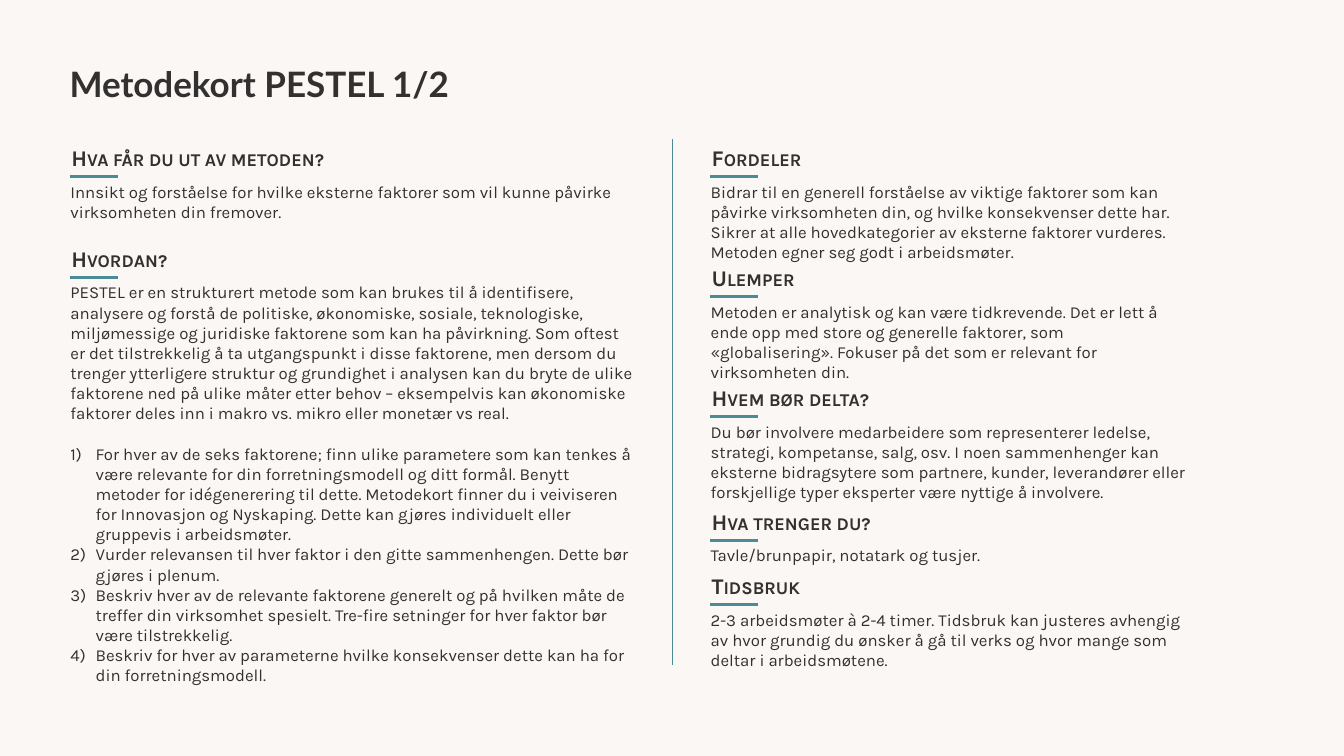
"""Build the PESTEL method card slide."""
from lxml.etree import SubElement
from pptx import Presentation
from pptx.dml.color import RGBColor
from pptx.enum.shapes import MSO_CONNECTOR
from pptx.enum.text import MSO_ANCHOR, MSO_AUTO_SIZE, PP_ALIGN
from pptx.oxml.ns import qn
from pptx.util import Pt

PX = 9144
INK, TEAL, PAPER = "333030", "4B8B95", "FBF7F5"
TITLE = "Metodekort PESTEL 1/2"
STEPS = [
    "For hver av de seks faktorene; finn ulike parametere som kan tenkes å være relevante for din forretningsmodell og ditt formål. Benytt metoder for idégenerering til dette. Metodekort finner du i veiviseren for Innovasjon og Nyskaping. Dette kan gjøres individuelt eller gruppevis i arbeidsmøter.",
    "Vurder relevansen til hver faktor i den gitte sammenhengen. Dette bør gjøres i plenum.",
    "Beskriv hver av de relevante faktorene generelt og på hvilken måte de treffer din virksomhet spesielt. Tre-fire setninger for hver faktor bør være tilstrekkelig.",
    "Beskriv for hver av parameterne hvilke konsekvenser dette kan ha for din forretningsmodell.",
]
# (top, body height, heading, body, steps)
LEFT_SECTIONS = [
    (138, 50, "Hva får du ut av metoden?", "Innsikt og forståelse for hvilke eksterne faktorer som vil kunne påvirke virksomheten din fremover.", []),
    (238, 394, "Hvordan?", "PESTEL er en strukturert metode som kan brukes til å identifisere, analysere og forstå de politiske, økonomiske, sosiale, teknologiske, miljømessige og juridiske faktorene som kan ha påvirkning. Som oftest er det tilstrekkelig å ta utgangspunkt i disse faktorene, men dersom du trenger ytterligere struktur og grundighet i analysen kan du bryte de ulike faktorene ned på ulike måter etter behov – eksempelvis kan økonomiske faktorer deles inn i makro vs. mikro eller monetær vs real.", STEPS),
]
RIGHT_SECTIONS = [
    (138, 91, "Fordeler", "Bidrar til en generell forståelse av viktige faktorer som kan påvirke virksomheten din, og hvilke konsekvenser dette har. Sikrer at alle hovedkategorier av eksterne faktorer vurderes. Metoden egner seg godt i arbeidsmøter.", []),
    (257, 91, "Ulemper", "Metoden er analytisk og kan være tidkrevende. Det er lett å ende opp med store og generelle faktorer, som «globalisering». Fokuser på det som er relevant for virksomheten din.", []),
    (376, 91, "Hvem bør delta?", "Du bør involvere medarbeidere som representerer ledelse, strategi, kompetanse, salg, osv. I noen sammenhenger kan eksterne bidragsytere som partnere, kunder, leverandører eller forskjellige typer eksperter være nyttige å involvere.", []),
    (499, 30, "Hva trenger du?", "Tavle/brunpapir, notatark og tusjer.", []),
    (563, 71, "Tidsbruk", "2-3 arbeidsmøter à 2-4 timer. Tidsbruk kan justeres avhengig av hvor grundig du ønsker å gå til verks og hvor mange som deltar i arbeidsmøtene.", []),
]
COLUMNS = [(60, 578, LEFT_SECTIONS), (695, 491, RIGHT_SECTIONS)]
HEADING_WIDTH, HEADING_HEIGHT = 491, 37
RULE_INSET, RULE_WIDTH = 9, 48


def color(value):
    """Turn a hex string into a colour."""
    return RGBColor.from_string(value)


def style(paragraph, size, face="Karla", bold=False):
    """Set the font of a whole paragraph."""
    font = paragraph.font
    font.name, font.size, font.bold = face, Pt(size), bold
    font.color.rgb = color(INK)


def add_text(slide, left, top, width, height, text):
    """Add a wrapping text box and return its frame."""
    frame = slide.shapes.add_textbox(left * PX, top * PX, width * PX, height * PX).text_frame
    frame.word_wrap = True
    frame.auto_size = MSO_AUTO_SIZE.SHAPE_TO_FIT_TEXT
    frame.text = text
    return frame


def add_line(slide, x1, y1, x2, y2, weight):
    """Draw a teal line without shadow."""
    line = slide.shapes.add_connector(MSO_CONNECTOR.STRAIGHT, x1 * PX, y1 * PX, x2 * PX, y2 * PX)
    line.line.color.rgb = color(TEAL)
    line.line.width = Pt(weight)
    SubElement(line.element.spPr, qn("a:effectLst"))


def add_step(frame, text, space_before):
    """Append one numbered step."""
    paragraph = frame.add_paragraph()
    paragraph.text = text
    paragraph.space_before = Pt(space_before)
    properties = paragraph._p.get_or_add_pPr()
    properties.set("marL", str(25 * PX))
    properties.set("indent", str(-25 * PX))
    SubElement(properties, qn("a:buFont"), typeface="+mj-lt")
    SubElement(properties, qn("a:buAutoNum"), type="arabicParenR")
    style(paragraph, 12)


def add_section(slide, left, width, top, height, heading, body, steps):
    """Add a heading, its short rule and the text below."""
    heading_frame = add_text(slide, left + 1, top, HEADING_WIDTH, HEADING_HEIGHT, heading)
    heading_line = heading_frame.paragraphs[0]
    style(heading_line, 16, bold=True)
    heading_line.runs[0]._r.get_or_add_rPr().set("cap", "small")
    rule_top = top + HEADING_HEIGHT
    body_frame = add_text(slide, left, rule_top, width, height, body)
    style(body_frame.paragraphs[0], 12)
    for index, step in enumerate(steps):
        add_step(body_frame, step, 0 if index else 14.4)
    rule_left = left + RULE_INSET
    add_line(slide, rule_left, rule_top, rule_left + RULE_WIDTH, rule_top, 2.25)


def add_title(slide):
    """Place and format the title."""
    title = slide.shapes.title
    title.left, title.top, title.width, title.height = (n * PX for n in (69, 62, 1195, 42))
    frame = title.text_frame
    frame.text = TITLE
    frame.margin_left = frame.margin_top = frame.margin_right = frame.margin_bottom = 0
    frame.vertical_anchor = MSO_ANCHOR.MIDDLE
    frame.auto_size = MSO_AUTO_SIZE.NONE
    paragraph = frame.paragraphs[0]
    paragraph.alignment = PP_ALIGN.LEFT
    paragraph.line_spacing = Pt(30)
    style(paragraph, 25, "Lato", True)


def main():
    """Create and save the slide."""
    deck = Presentation()
    deck.slide_width, deck.slide_height = 1333 * PX, 750 * PX
    slide = deck.slides.add_slide(deck.slide_layouts[5])
    slide.background.fill.solid()
    slide.background.fill.fore_color.rgb = color(PAPER)
    add_title(slide)
    for left, width, sections in COLUMNS:
        for section in sections:
            add_section(slide, left, width, *section)
    add_line(slide, 667, 138, 667, 660, 0.5)
    deck.save("out.pptx")


if __name__ == "__main__":
    main()
